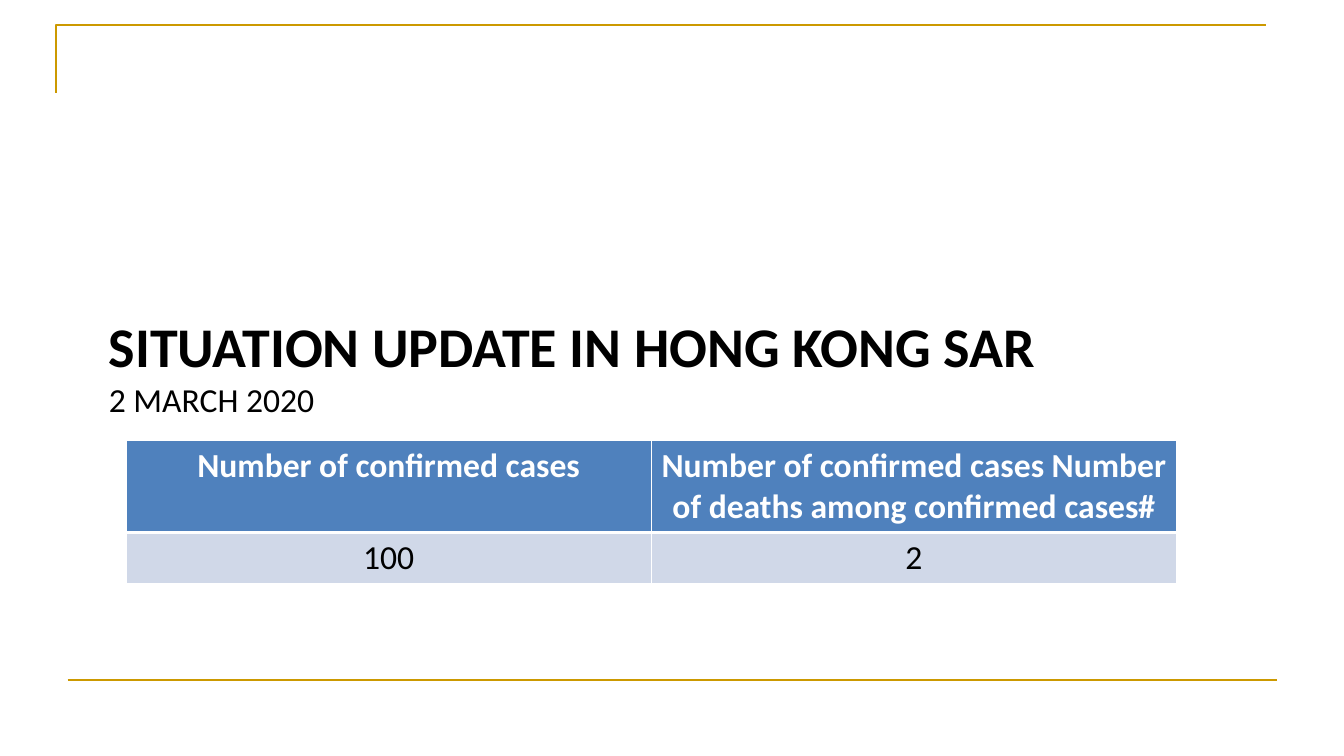
from dataclasses import dataclass

from lxml import etree
from pptx import Presentation
from pptx.dml.color import RGBColor
from pptx.enum.shapes import MSO_CONNECTOR
from pptx.enum.text import MSO_ANCHOR, MSO_AUTO_SIZE, PP_ALIGN
from pptx.oxml.ns import qn
from pptx.util import Inches, Pt

LEFT, CENTER = PP_ALIGN.LEFT, PP_ALIGN.CENTER
TOP = MSO_ANCHOR.TOP
NO_AUTOSIZE = MSO_AUTO_SIZE.NONE
STRAIGHT = MSO_CONNECTOR.STRAIGHT
TITLE_ONLY = 5


@dataclass(frozen=True)
class Theme:
    font: str = "Calibri"
    title_size: int = 40
    text_size: int = 24
    rule_width: float = 1.5
    gold: str = "CC9900"
    black: str = "000000"
    white: str = "FFFFFF"
    header: str = "4F81BD"
    band: str = "D0D8E8"


THEME = Theme()
COUNTS = [
    ["Number of confirmed cases",
     "Number of confirmed cases Number of deaths among confirmed cases#"],
    ["100", "2"],
]


def add_run(p, text, size, color, bold=False):
    r = p.add_run()
    r.text = text
    r.font.name = THEME.font
    r.font.size = Pt(size)
    r.font.bold = bold
    r.font.color.rgb = RGBColor.from_string(color)


def style_rule(line):
    line.color.rgb = RGBColor.from_string(THEME.gold)
    line.width = Pt(THEME.rule_width)


def add_frame(slide, left, top, width, height):
    # Corner line: short left side and full top edge
    corner = slide.shapes.build_freeform(Inches(left), Inches(top + 0.67))
    corner.add_line_segments(
        [(Inches(left), Inches(top)), (Inches(left + width), Inches(top))],
        close=False)
    sp = corner.convert_to_shape()
    sp.fill.background()
    sp.shadow.inherit = False
    style_rule(sp.line)

    # Bottom line, shifted slightly to the right
    x, y = left + 0.11, top + height
    rule = slide.shapes.add_connector(
        STRAIGHT, Inches(x), Inches(y), Inches(x + width), Inches(y))
    style_rule(rule.line)
    etree.SubElement(rule._element.spPr, qn("a:effectLst"))


def add_title(slide, left, top, width, height):
    title = slide.shapes.title
    title.left, title.top = Inches(left), Inches(top)
    title.width, title.height = Inches(width), Inches(height)
    tf = title.text_frame
    tf.word_wrap = True
    tf.auto_size = NO_AUTOSIZE
    tf.vertical_anchor = TOP
    tf.margin_top = Inches(0.75)

    p = tf.paragraphs[0]
    p.alignment = LEFT
    add_run(p, "SITUATION UPDATE IN HONG KONG SAR",
            THEME.title_size, THEME.black, bold=True)
    p = tf.add_paragraph()
    p.alignment = LEFT
    add_run(p, "2 MARCH 2020", THEME.text_size, THEME.black)


def set_borders(cell, widths):
    tc_pr = cell._tc.get_or_add_tcPr()
    for side, width in widths.items():
        ln = etree.SubElement(tc_pr, qn(f"a:ln{side}"), w=str(Pt(width)))
        fill = etree.SubElement(ln, qn("a:solidFill"))
        etree.SubElement(fill, qn("a:srgbClr"), val=THEME.white)


def add_counts_table(slide, left, top, width, row_heights):
    table = slide.shapes.add_table(
        len(COUNTS), len(COUNTS[0]), Inches(left), Inches(top),
        Inches(width), Inches(sum(row_heights))).table
    for row, height in zip(table.rows, row_heights):
        row.height = Inches(height)

    for i, values in enumerate(COUNTS):
        is_header = i == 0
        # The edge between header and values is thicker
        borders = {"L": 1, "R": 1,
                   "T": 1 if is_header else 3, "B": 3 if is_header else 1}
        for j, value in enumerate(values):
            cell = table.cell(i, j)
            set_borders(cell, borders)
            cell.fill.solid()
            cell.fill.fore_color.rgb = RGBColor.from_string(
                THEME.header if is_header else THEME.band)
            p = cell.text_frame.paragraphs[0]
            p.alignment = CENTER
            add_run(p, value, THEME.text_size,
                    THEME.white if is_header else THEME.black, bold=is_header)


def main():
    prs = Presentation()
    prs.slide_width, prs.slide_height = Inches(13.33), Inches(7.5)
    slide = prs.slides.add_slide(prs.slide_layouts[TITLE_ONLY])
    add_frame(slide, 0.56, 0.25, 12, 6.5)
    add_title(slide, 0.98, 2.34, 9.93, 2.76)
    add_counts_table(slide, 1.25, 4.37, 10.42, [0.9, 0.5])
    prs.save("out.pptx")


if __name__ == "__main__":
    main()
